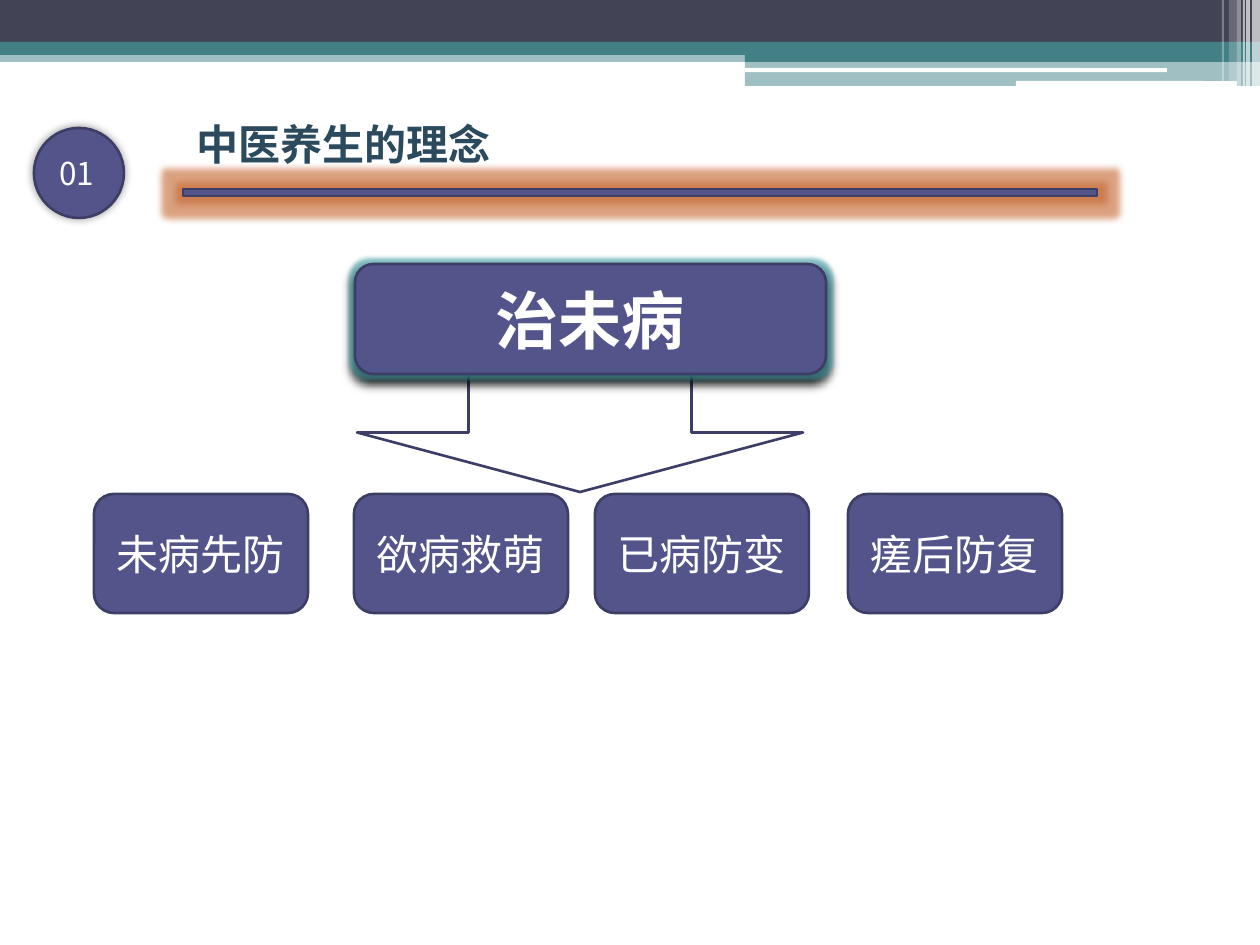
from lxml import etree
from pptx import Presentation
from pptx import util as u
from pptx.dml.color import RGBColor
from pptx.enum import shapes, text
from pptx.oxml import ns

WHITE = RGBColor(0xFF, 0xFF, 0xFF)
BLACK = RGBColor(0, 0, 0)
SLATE = RGBColor(0x42, 0x44, 0x56)
TEAL = RGBColor(0x43, 0x80, 0x86)
INDIGO = RGBColor(0x53, 0x54, 0x8A)
INDIGO_EDGE = RGBColor(0x3D, 0x3E, 0x66)
TITLE_BLUE = RGBColor(0x2B, 0x4A, 0x5E)
ORANGE_GLOW = RGBColor(0xC4, 0x65, 0x2D)
TEAL_GLOW = RGBColor(0x43, 0xA0, 0xA8)

FONT = "Noto Sans CJK SC"
KIND = shapes.MSO_SHAPE
PX_PER_INCH = 126

BANDS = [
    (0, 50, 1260, 12, TEAL, 50),
    (0, 0, 1260, 42, SLATE, 100),
    (0, 42, 1260, 13, TEAL, 100),
    (745, 49, 515, 13, TEAL, 100),
    (745, 61, 515, 25, TEAL, 50),
]
SLOTS = [(745, 68, 422, 4), (1016, 81, 221, 5)]
STRIPES = [
    (1252, 8, 86, 65),
    (1246, 4, 86, 65),
    (1243, 2, 86, 60),
    (1237, 4, 86, 40),
    (1229, 8, 81, 20),
    (1222, 2, 81, 30),
]
NUMBER = "01"
TITLE = "中医养生的理念"
CORE = "治未病"
STAGES = [(94, "未病先防"), (354, "欲病救萌"), (595, "已病防变"), (848, "瘥后防复")]
STAGE_TOP, STAGE_WIDTH, STAGE_HEIGHT = 494, 214, 119


def px(n):
    return u.Emu(round(n * 914400 / PX_PER_INCH))


def add_alpha(color, percent):
    etree.SubElement(color, ns.qn("a:alpha"), val=str(percent * 1000))


def add_effect(shape, tag, color, percent, **attributes):
    effects = shape._element.spPr.find(ns.qn("a:effectLst"))
    effect = etree.SubElement(effects, ns.qn(tag), **attributes)
    tint = etree.SubElement(effect, ns.qn("a:srgbClr"), val=str(color))
    add_alpha(tint, percent)


def add_glow(shape, color, percent, points):
    add_effect(shape, "a:glow", color, percent, rad=str(u.Pt(points)))


def add_shadow(shape, percent, blur, distance, degrees):
    add_effect(shape, "a:outerShdw", BLACK, percent, blurRad=str(u.Pt(blur)),
               dist=str(u.Pt(distance)), dir=str(degrees * 60000),
               algn="ctr", rotWithShape="0")


def add_figure(slide, kind, box, fill=None, opacity=100, edge=None):
    figure = slide.shapes.add_shape(kind, *map(px, box))
    figure.shadow.inherit = False
    if fill is None:
        figure.fill.background()
    else:
        figure.fill.solid()
        figure.fill.fore_color.rgb = fill
        if opacity < 100:
            add_alpha(figure._element.spPr.find(".//" + ns.qn("a:srgbClr")), opacity)
    if edge is None:
        figure.line.fill.background()
    else:
        figure.line.color.rgb = edge
        figure.line.width = u.Pt(1.5)
    return figure


def write(shape, words, size, color=WHITE, bold=False, align=text.PP_ALIGN.CENTER):
    paragraph = shape.text_frame.paragraphs[0]
    paragraph.alignment = align
    run = paragraph.add_run()
    run.text = words
    run.font.size = u.Pt(size)
    run.font.bold = bold
    run.font.name = FONT
    run.font.color.rgb = color
    etree.SubElement(run._r.get_or_add_rPr(), ns.qn("a:ea"), typeface=FONT)


def add_banner(slide):
    for *box, color, opacity in BANDS:
        add_figure(slide, KIND.RECTANGLE, box, color, opacity)
    for box in SLOTS:
        add_figure(slide, KIND.ROUNDED_RECTANGLE, box, WHITE)
    for left, width, height, opacity in STRIPES:
        add_figure(slide, KIND.RECTANGLE, (left, 0, width, height), WHITE, opacity)


def add_heading(slide):
    number = add_figure(slide, KIND.OVAL, (34, 128, 90, 90), INDIGO, edge=INDIGO_EDGE)
    add_shadow(number, 40, 5, 0, 0)
    write(number, NUMBER, 18, align=text.PP_ALIGN.LEFT)

    rule = add_figure(slide, KIND.RECTANGLE, (183, 189, 914, 7), INDIGO, edge=INDIGO_EDGE)
    add_glow(rule, ORANGE_GLOW, 60, 8)

    title = slide.shapes.add_textbox(*map(px, (184, 112, 397, 63)))
    title.text_frame.word_wrap = True
    title.text_frame.auto_size = text.MSO_AUTO_SIZE.SHAPE_TO_FIT_TEXT
    write(title, TITLE, 24, TITLE_BLUE, True, text.PP_ALIGN.LEFT)


def add_stages(slide):
    add_figure(slide, KIND.DOWN_ARROW, (357, 373, 446, 119), edge=INDIGO_EDGE)

    core = add_figure(slide, KIND.ROUNDED_RECTANGLE, (355, 264, 471, 110),
                      INDIGO, edge=INDIGO_EDGE)
    add_glow(core, TEAL_GLOW, 60, 5)
    add_shadow(core, 88, 4, 4, 90)
    write(core, CORE, 36, bold=True)

    for left, words in STAGES:
        stage = add_figure(slide, KIND.ROUNDED_RECTANGLE,
                           (left, STAGE_TOP, STAGE_WIDTH, STAGE_HEIGHT),
                           INDIGO, edge=INDIGO_EDGE)
        write(stage, words, 24)


def main():
    deck = Presentation()
    deck.slide_width, deck.slide_height = px(1260), px(945)
    slide = deck.slides.add_slide(deck.slide_layouts[6])
    add_banner(slide)
    add_heading(slide)
    add_stages(slide)
    deck.save("out.pptx")


if __name__ == "__main__":
    main()
